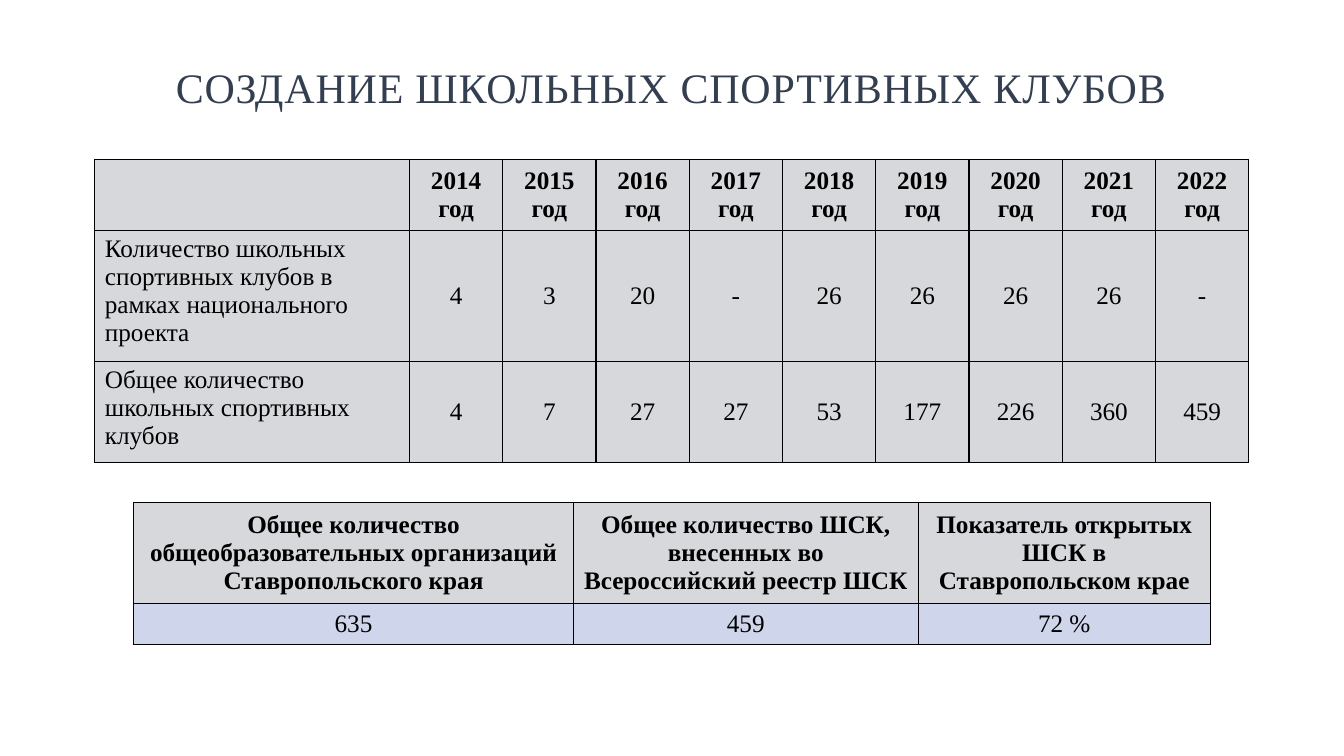
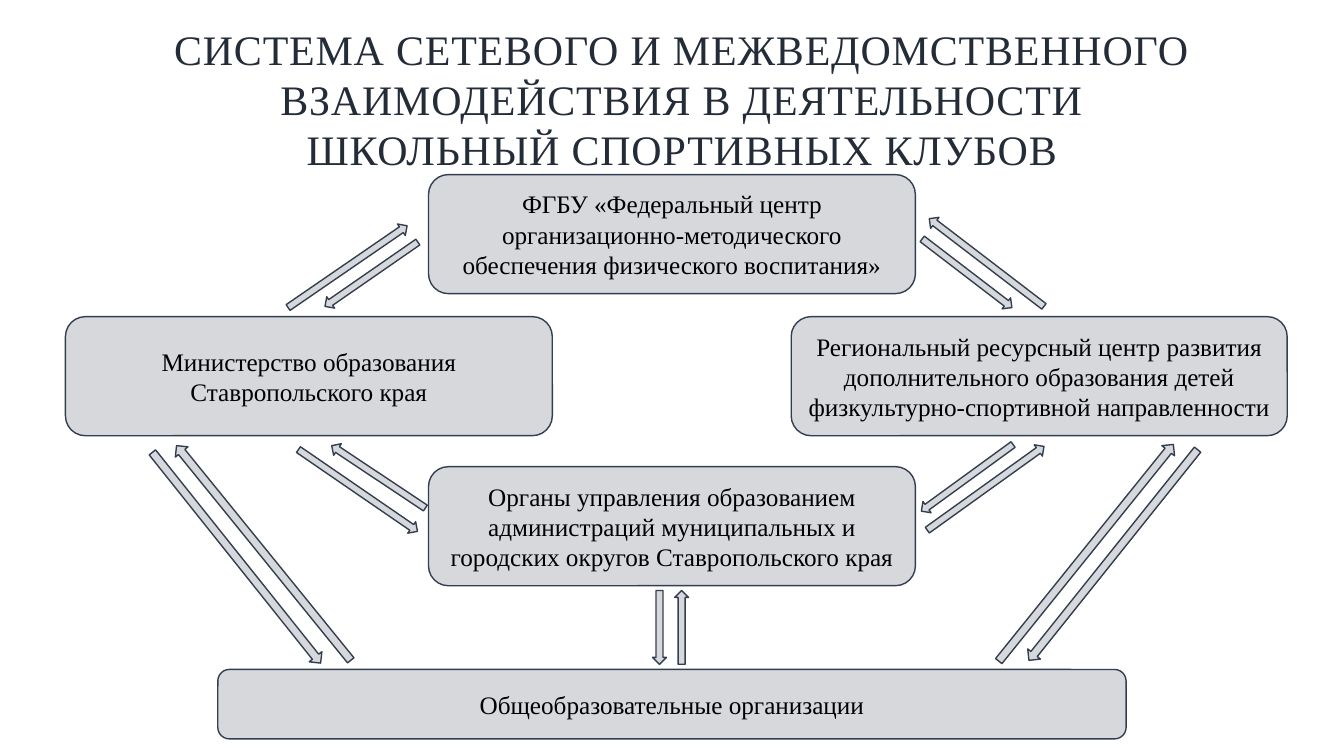
import math

from lxml import etree
from pptx import Presentation
from pptx.dml.color import RGBColor
from pptx.enum.shapes import MSO_SHAPE
from pptx.enum.text import MSO_ANCHOR, PP_ALIGN
from pptx.oxml import parse_xml
from pptx.oxml.ns import nsdecls, qn
from pptx.util import Cm, Pt

CENTER, LEFT = PP_ALIGN.CENTER, PP_ALIGN.LEFT
MIDDLE, TOP = MSO_ANCHOR.MIDDLE, MSO_ANCHOR.TOP
ROUND_RECT, UP_ARROW = MSO_SHAPE.ROUNDED_RECTANGLE, MSO_SHAPE.UP_ARROW

# Shared look
NAVY, DARK, OUTLINE = "333F50", "242C38", "3B3838"
BLACK, PALE_BLUE = "000000", "CFD5EA"
TINT = 20
BODY = {"name": "Times New Roman", "size": Pt(18), "bold": False}
HEADER = {**BODY, "bold": True}
TITLE = {**BODY, "size": Pt(30)}


def rgb(value):
    return RGBColor.from_string(value)


def paint(fill, xml, color, alpha=100):
    fill.solid()
    fill.fore_color.rgb = rgb(color)
    if alpha < 100:
        clr = xml.find(".//" + qn("a:srgbClr"))
        etree.SubElement(clr, qn("a:alpha"), val=str(alpha * 1000))


def line_xml(tag, color):
    return parse_xml(f'<a:{tag} {nsdecls("a")} w="12700"><a:solidFill>'
                     f'<a:srgbClr val="{color}"/></a:solidFill></a:{tag}>')


def write(tf, text, fmt=BODY, color=BLACK, align=CENTER):
    p = tf.paragraphs[0]
    p.alignment = align
    r = p.add_run()
    r.text = text
    for key, value in fmt.items():
        setattr(r.font, key, value)
    r.font.color.rgb = rgb(color)
    return r


def add_title(s, text, x, y, w, h, color=NAVY):
    tf = s.shapes.add_textbox(Cm(x), Cm(y), Cm(w), Cm(h)).text_frame
    tf.word_wrap = True
    r = write(tf, text, TITLE, color)
    rpr = r.font._element
    rpr.set("spc", "60")
    rpr.insert(0, line_xml("ln", OUTLINE))


def add_grid(s, x, y, widths, heights, rows, label_column=False, body_fill=(NAVY, TINT)):
    frame = s.shapes.add_table(len(rows), len(widths), Cm(x), Cm(y),
                               Cm(sum(widths)), Cm(sum(heights)))
    table = frame.table
    table.first_row = table.horz_banding = False
    for col, width in zip(table.columns, widths):
        col.width = Cm(width)
    for row, height in zip(table.rows, heights):
        row.height = Cm(height)
    for i, texts in enumerate(rows):
        for j, text in enumerate(texts):
            cell = table.cell(i, j)
            is_label = label_column and i > 0 and j == 0
            cell.vertical_anchor = TOP if is_label else MIDDLE
            if text:
                write(cell.text_frame, text, BODY if i else HEADER,
                      align=LEFT if is_label else CENTER)
            tc_pr = cell._tc.get_or_add_tcPr()
            paint(cell.fill, tc_pr, *(body_fill if i else (NAVY, TINT)))
            for k, side in enumerate(("lnL", "lnR", "lnT", "lnB")):
                tc_pr.insert(k, line_xml(side, BLACK))


def add_tinted(s, kind, x, y, w, h):
    sp = s.shapes.add_shape(kind, Cm(x), Cm(y), Cm(w), Cm(h))
    sp.shadow.inherit = False
    paint(sp.fill, sp._element.spPr, NAVY, TINT)
    sp.line.color.rgb = rgb(NAVY)
    sp.line.width = Pt(1)
    return sp


def add_node(s, text, x, y, w, h):
    tf = add_tinted(s, ROUND_RECT, x, y, w, h).text_frame
    tf.word_wrap = True
    tf.vertical_anchor = MIDDLE
    write(tf, text)


def add_arrow(s, x1, y1, x2, y2):
    """Block arrow from (x1, y1) with its tip at (x2, y2)."""
    dx, dy = x2 - x1, y2 - y1
    length = math.hypot(dx, dy)
    w = 0.41 if length > 5 else 0.35
    sp = add_tinted(s, UP_ARROW, (x1 + x2 - w) / 2, (y1 + y2 - length) / 2, w, length)
    sp.rotation = math.degrees(math.atan2(dx, -dy)) % 360


# Contents
CLUBS = [
    [""] + [f"{year} год" for year in range(2014, 2023)],
    ["Количество школьных спортивных клубов в рамках национального проекта",
     "4", "3", "20", "-", "26", "26", "26", "26", "-"],
    ["Общее количество школьных спортивных клубов",
     "4", "7", "27", "27", "53", "177", "226", "360", "459"],
]
TOTALS = [
    ["Общее количество общеобразовательных организаций Ставропольского края",
     "Общее количество ШСК, внесенных во Всероссийский реестр ШСК",
     "Показатель открытых ШСК в Ставропольском крае"],
    ["635", "459", "72 %"],
]

# Network parts, in cm from the corner of the diagram
NODE_W, NODE_H = 12.27, 3
NODES = [
    ("ФГБУ «Федеральный центр организационно-методического обеспечения "
     "физического воспитания»", 9.15, 0, NODE_W, NODE_H),
    ("Министерство образования Ставропольского края", 0, 3.58, NODE_W, NODE_H),
    ("Региональный ресурсный центр развития дополнительного образования детей "
     "физкультурно-спортивной направленности", 18.29, 3.58, 12.5, NODE_H),
    ("Органы управления образованием администраций муниципальных и "
     "городских округов Ставропольского края", 9.15, 7.36, NODE_W, NODE_H),
    ("Общеобразовательные организации", 3.84, 12.47, 22.89, 1.75),
]
ARROWS = [
    # ministry and federal centre
    (5.61, 3.35, 8.61, 1.29), (8.88, 1.7, 6.54, 3.32),
    # regional and federal centres
    (24.66, 3.32, 21.77, 1.11), (21.59, 1.62, 23.85, 3.35),
    # ministry and municipal bodies
    (9.07, 8.4, 6.71, 6.83), (5.87, 6.93, 8.87, 8.99),
    # ministry and schools
    (7.19, 12.24, 2.8, 6.83), (2.19, 7, 6.43, 12.31),
    # municipal bodies and schools
    (14.97, 10.48, 14.97, 12.34), (15.53, 12.34, 15.53, 10.48),
    # regional centre and schools
    (23.52, 12.26, 27.92, 6.8), (28.53, 6.93, 24.28, 12.24),
    # regional centre and municipal bodies
    (21.72, 8.96, 24.66, 6.85), (23.88, 6.8, 21.57, 8.48),
]


def add_network(s, x, y):
    for text, dx, dy, w, h in NODES:
        add_node(s, text, x + dx, y + dy, w, h)
    for x1, y1, x2, y2 in ARROWS:
        add_arrow(s, x + x1, y + y1, x + x2, y + y2)


def clubs_slide(s):
    add_title(s, "СОЗДАНИЕ ШКОЛЬНЫХ СПОРТИВНЫХ КЛУБОВ", 1.8, 1.42, 30.25, 1.55)
    add_grid(s, 2.39, 4.02, [7.93] + [2.35] * 9, [1.76, 3.3, 2.55],
             CLUBS, label_column=True)
    add_grid(s, 3.37, 12.67, [11.08, 8.69, 7.36], [2.54, 1.03],
             TOTALS, body_fill=(PALE_BLUE,))


def network_slide(s):
    add_title(s, "СИСТЕМА СЕТЕВОГО И МЕЖВЕДОМСТВЕННОГО ВЗАИМОДЕЙСТВИЯ "
              "В ДЕЯТЕЛЬНОСТИ ШКОЛЬНЫЙ СПОРТИВНЫХ КЛУБОВ",
              3.48, 0.46, 27.43, 4.11, DARK)
    add_network(s, 1.65, 4.4)


def main():
    prs = Presentation()
    prs.slide_width, prs.slide_height = Cm(33.87), Cm(19.05)
    for build in (clubs_slide, network_slide):
        build(prs.slides.add_slide(prs.slide_layouts[6]))
    prs.save("out.pptx")


if __name__ == "__main__":
    main()
